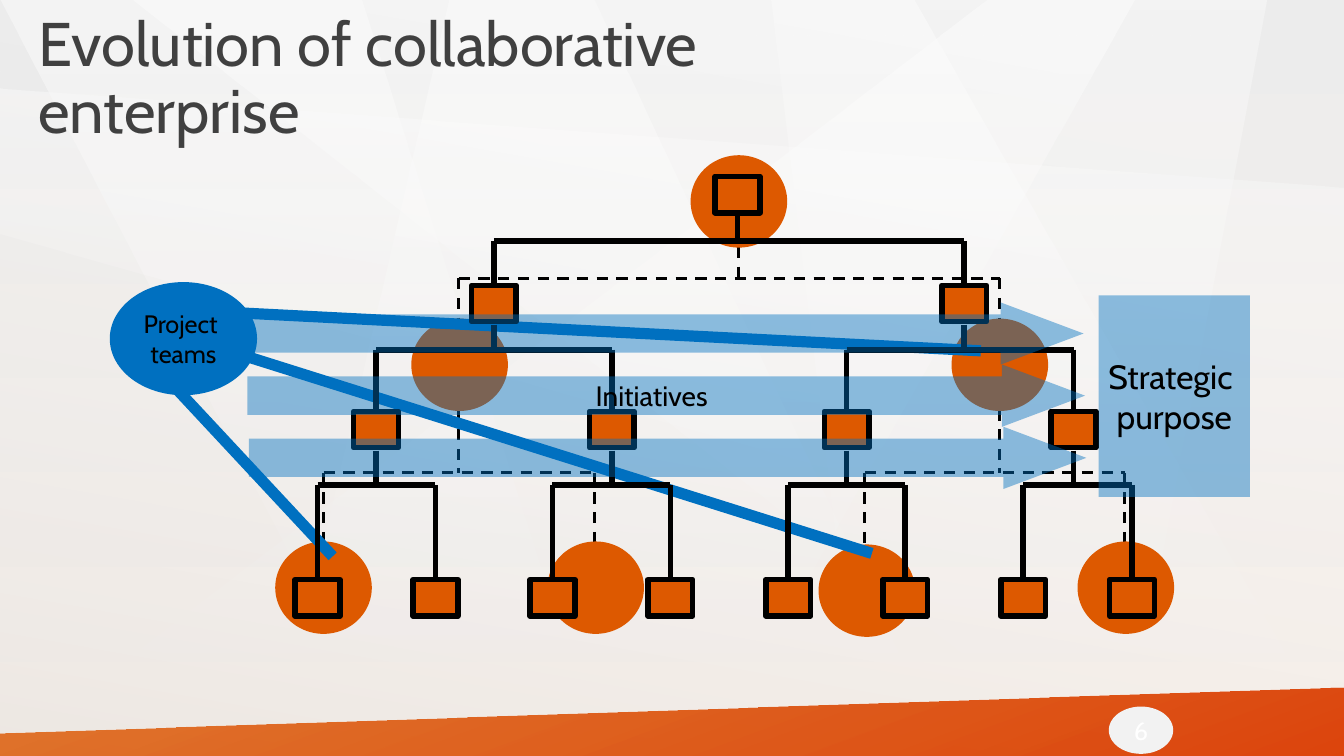
from lxml.etree import SubElement
from pptx import Presentation
from pptx.dml.color import RGBColor
from pptx.enum.dml import MSO_LINE
from pptx.enum.shapes import MSO_CONNECTOR, MSO_SHAPE
from pptx.enum.text import MSO_ANCHOR, MSO_AUTO_SIZE, PP_ALIGN
from pptx.oxml.ns import qn
from pptx.util import Pt

FONT = "Cabin"
ORANGE, BLUE, BLACK, WHITE = "DD5900", "0070C0", "000000", "FFFFFF"
PALE, GREY = "F2F2F2", "404040"


def rgb(value):
    return RGBColor.from_string(value)


class Diagram:
    """Draws styled elements on one slide, with all lengths in points."""

    def __init__(self, prs):
        self.s = prs.slides.add_slide(prs.slide_layouts[5])

    def gradient(self, fill, root, angle, stops):
        fill.gradient()
        fill.gradient_angle = 360 - angle
        for stop, (color, _) in zip(fill.gradient_stops, stops):
            stop.color.rgb = rgb(color)
        for clr, (_, opacity) in zip(list(root.iter(qn("a:srgbClr"))), stops):
            self.opacity(clr, opacity)

    def opacity(self, clr, percent):
        if percent < 100:
            SubElement(clr, qn("a:alpha"), val=str(percent * 1000))

    def backdrop(self, angle, *stops):
        self.gradient(self.s.background.fill, self.s._element, angle, stops)

    def facet(self, points, angle, *stops):
        (x, y), *rest = [(Pt(px), Pt(py)) for px, py in points]
        builder = self.s.shapes.build_freeform(x, y)
        builder.add_line_segments(rest, close=True)
        sp = builder.convert_to_shape()
        sp.shadow.inherit = False
        sp.line.fill.background()
        self.gradient(sp.fill, sp._element, angle, stops)

    def title(self, text, x, y, w, h):
        sp = self.s.shapes.title
        self.s.shapes._spTree.append(sp._element)
        sp.left, sp.top, sp.width, sp.height = Pt(x), Pt(y), Pt(w), Pt(h)
        self.label(sp, text, 44, GREY, PP_ALIGN.LEFT)
        sp.text_frame.word_wrap = True
        sp.text_frame.paragraphs[0].line_spacing = 0.9

    def label(self, sp, text, size, color=BLACK, align=PP_ALIGN.CENTER):
        tf = sp.text_frame
        tf.text = text
        tf.word_wrap = False
        tf.auto_size = MSO_AUTO_SIZE.NONE
        tf.vertical_anchor = MSO_ANCHOR.MIDDLE
        for p in tf.paragraphs:
            p.alignment = align
            for r in p.runs:
                r.font.name, r.font.size = FONT, Pt(size)
                r.font.color.rgb = rgb(color)

    def shape(self, kind, x, y, w, h, fill, opacity=100, line=None, width=0):
        sp = self.s.shapes.add_shape(kind, Pt(x), Pt(y), Pt(w), Pt(h))
        sp.shadow.inherit = False
        sp.fill.solid()
        sp.fill.fore_color.rgb = rgb(fill)
        self.opacity(next(sp._element.iter(qn("a:srgbClr"))), opacity)
        if line:
            sp.line.color.rgb = rgb(line)
            sp.line.width = Pt(width)
        else:
            sp.line.fill.background()
        return sp

    def line(self, x1, y1, x2, y2, color=BLACK, width=4, dash=None):
        c = self.s.shapes.add_connector(
            MSO_CONNECTOR.STRAIGHT, Pt(x1), Pt(y1), Pt(x2), Pt(y2))
        c.line.color.rgb = rgb(color)
        c.line.width = Pt(width)
        if dash:
            c.line.dash_style = dash
        SubElement(c._element.spPr, qn("a:effectLst"))

    def branch(self, parent, top, bar, children, bottom, **style):
        self.line(parent, top, parent, bar, **style)
        self.line(children[0], bar, children[-1], bar, **style)
        for x in children:
            self.line(x, bar, x, bottom, **style)

    def circle(self, cx, cy):
        self.shape(MSO_SHAPE.OVAL, cx - 34.5, cy - 33, 69, 66, ORANGE)

    def box(self, cx, top):
        self.shape(MSO_SHAPE.RECTANGLE, cx - 16, top, 32, 26, ORANGE,
                   line=BLACK, width=4)

    def arrow(self, x, y):
        sp = self.shape(MSO_SHAPE.RIGHT_ARROW, x, y, 598.3, 44.5, BLUE, 44)
        sp.adjustments[0], sp.adjustments[1] = 0.615, 1.333
        return sp


def draw_background(d):
    d.backdrop(90, ("ECECEC", 100), ("FCF5EF", 100))
    beams = [
        (50, [(705, 0), (0, 540), (505, 540), (810, 0)]),
        (50, [(0, 0), (258, 0), (428, 540), (282, 540)]),
        (50, [(95, 0), (653, 0), (960, 540), (780, 540)]),
        (40, [(551, 0), (616, 540), (803, 540), (905, 0)]),
        (50, [(424, 0), (321, 0), (196, 540), (676, 540)]),
        (40, [(0, 63), (960, 134), (960, 439), (0, 167)]),
    ]
    for opacity, points in beams:
        d.facet(points, 90, (WHITE, opacity), (WHITE, 0))
    d.facet([(0, 0), (960, 0), (960, 540), (0, 540)], 280,
            ("BFBFBF", 25), (WHITE, 0))
    d.facet([(0, 523.5), (960, 491), (960, 540), (0, 540)], 70,
            (ORANGE, 80), ("DC3C00", 95))


def draw_network(d):
    hubs, teams = [327.6, 714.2], [231.1, 424.8, 617.8, 803.5]
    dashed = {"width": 2, "dash": MSO_LINE.DASH}
    d.branch(527.8, 176.4, 198.7, hubs, 235.4, **dashed)
    for i, hub in enumerate(hubs):
        d.branch(hub, 264.2, 337.7, teams[2 * i:2 * i + 2], 388.8, **dashed)
    for cx, cy in [(714.2, 260.6), (328.3, 260.6), (231.1, 419.8),
                   (425.5, 419.8), (619.2, 421.9), (804.2, 419.8),
                   (527.8, 143.9)]:
        d.circle(cx, cy)


def draw_project_teams(d):
    sp = d.shape(MSO_SHAPE.OVAL, 79.9, 203, 102.2, 77.8, BLUE,
                 line=BLUE, width=3)
    d.label(sp, "Project \vteams", 18)
    for ends in [(622.8, 395.3, 165.6, 251.3), (700.6, 250.6, 165.6, 223.2),
                 (237.6, 397.4, 119.5, 270.7)]:
        d.line(*ends, color=BLUE, width=8)


def draw_hierarchy(d):
    levels = [
        (126, [526.8]),
        (203.8, [352.8, 688.7]),
        (293.8, [268.6, 437, 604.8, 766.8]),
        (414, [226.8, 311, 394.6, 478.8, 563, 646.6, 730.8, 808.6]),
    ]
    bars = [172.1, 249.8, 346.3]
    for top, centers in levels:
        for cx in centers:
            d.box(cx, top)
    for (top, parents), (below, children), bar in zip(levels, levels[1:], bars):
        for i, parent in enumerate(parents):
            d.branch(parent, top + 28, bar, children[2 * i:2 * i + 2], below - 2)


def draw_initiatives(d):
    arrows = [d.arrow(175.7 + i, 216 + 44.4 * i) for i in range(3)]
    d.label(arrows[1], "Initiatives", 20)
    arrows[1].text_frame.margin_left = Pt(23)
    sp = d.shape(MSO_SHAPE.RECTANGLE, 784.8, 211, 108, 144, BLUE, 44)
    d.label(sp, "Strategic \vpurpose", 24)


def main():
    prs = Presentation()
    prs.slide_width, prs.slide_height = Pt(960), Pt(540)
    d = Diagram(prs)
    draw_background(d)
    draw_network(d)
    d.title("Evolution of collaborative enterprise", 20.2, 12.2, 676, 90)
    number = d.shape(MSO_SHAPE.OVAL, 792, 504.7, 46, 33.8, PALE)
    d.label(number, "6", 18, WHITE)
    draw_project_teams(d)
    draw_hierarchy(d)
    draw_initiatives(d)
    prs.save("out.pptx")


if __name__ == "__main__":
    main()
